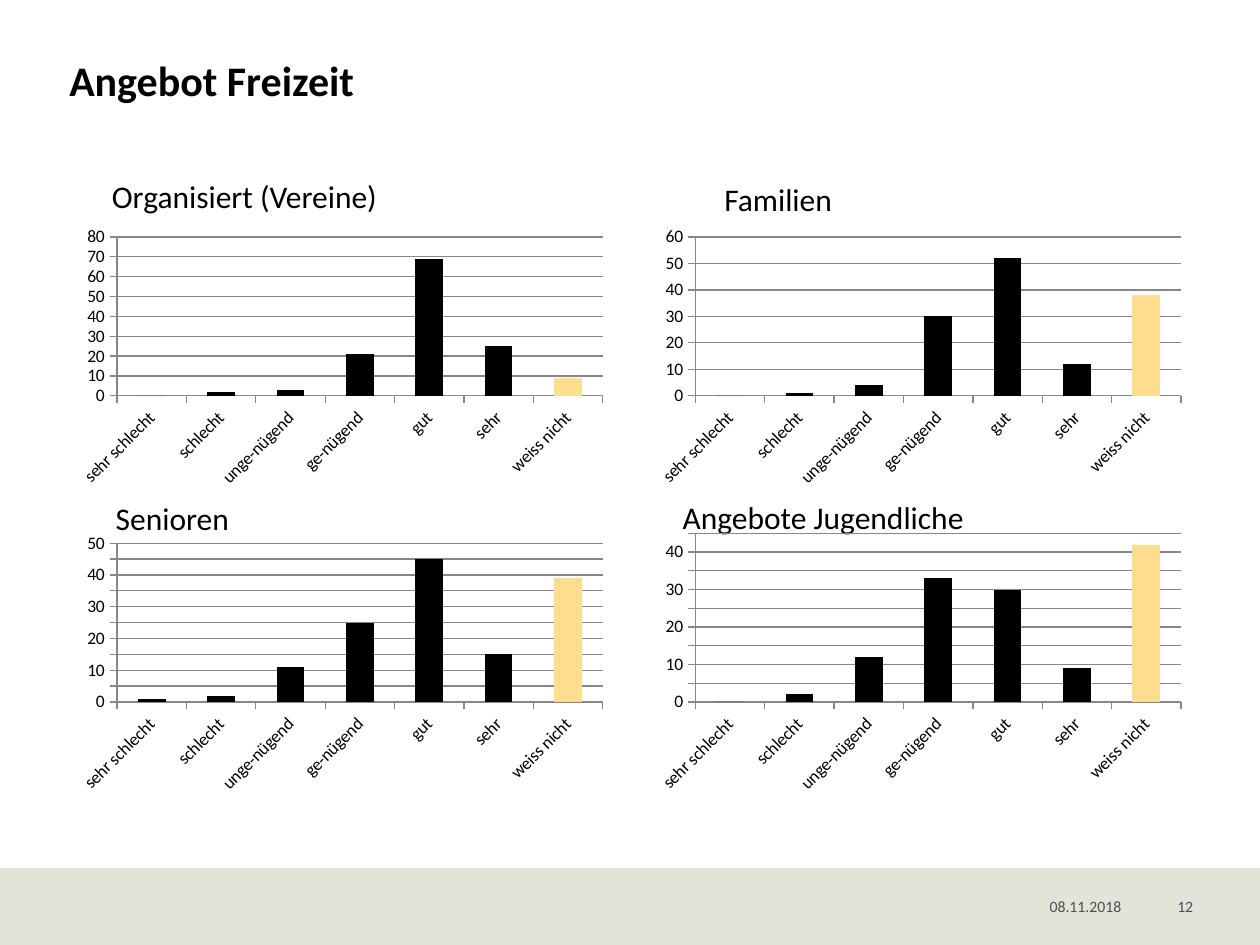
from pptx import Presentation
from pptx.chart.data import CategoryChartData
from pptx.dml.color import RGBColor
from pptx.enum.chart import XL_CHART_TYPE, XL_TICK_MARK
from pptx.enum.shapes import MSO_SHAPE
from pptx.enum.text import MSO_ANCHOR, PP_ALIGN
from pptx.util import Inches, Pt

COLUMN = XL_CHART_TYPE.COLUMN_CLUSTERED
OUT, NONE = XL_TICK_MARK.OUTSIDE, XL_TICK_MARK.NONE
RECT = MSO_SHAPE.RECTANGLE
TOP, LOW = MSO_ANCHOR.TOP, MSO_ANCHOR.BOTTOM
LEFT, RIGHT = PP_ALIGN.LEFT, PP_ALIGN.RIGHT

BLACK = RGBColor(0x00, 0x00, 0x00)
GOLD = RGBColor(0xFF, 0xDD, 0x8F)
SAND = RGBColor(0xE4, 0xE3, 0xD9)
SLATE = RGBColor(0x4C, 0x4F, 0x52)
GREY = RGBColor(0x87, 0x87, 0x87)

FACE = "Calibri"
GRADES = ["sehr schlecht", "schlecht", "unge-nügend", "ge-nügend",
          "gut", "sehr", "weiss nicht"]
COLS, ROWS = (0.55, 5.14), (1.76, 4.19)
PANELS = [
    ("Organisiert (Vereine)", (0.79, 1.36, 2.33, 0.4), (0, 2, 3, 21, 69, 25, 9), 80, 10),
    ("Familien", (5.65, 1.38, 1.07, 0.4), (0, 1, 4, 30, 52, 12, 38), 60, 10),
    ("Senioren", (0.82, 3.91, 1.11, 0.4), (1, 2, 11, 25, 45, 15, 39), 50, 5),
    ("Angebote Jugendliche", (5.32, 3.9, 2.46, 0.4), (0, 2, 12, 33, 30, 9, 42), 45, 5),
]


def assign(item, values):
    for name, value in values.items():
        setattr(item, name, value)


def inches(box):
    return [Inches(size) for size in box]


def write(shape, text, size, color=BLACK, bold=False, align=LEFT):
    frame = shape.text_frame
    frame.text = text
    para = frame.paragraphs[0]
    para.alignment = align
    assign(para.font, {"name": FACE, "size": Pt(size), "bold": bold})
    para.font.color.rgb = color


def trim(frame, anchor):
    assign(frame, {"margin_left": 0, "margin_right": 0, "margin_top": 0,
                   "margin_bottom": 0, "word_wrap": True,
                   "vertical_anchor": anchor})


def add_title(slide, text, box):
    title = slide.shapes.title
    assign(title, dict(zip(("left", "top", "width", "height"), inches(box))))
    trim(title.text_frame, TOP)
    write(title, text, 24, bold=True)


def add_band(slide, box):
    band = slide.shapes.add_shape(RECT, *inches(box))
    band.shadow.inherit = False
    band.fill.solid()
    band.fill.fore_color.rgb = SAND
    band.line.fill.background()


def add_foot(slide, text, box, align):
    foot = slide.shapes.add_textbox(*inches(box))
    trim(foot.text_frame, LOW)
    write(foot, text, 9, SLATE, align=align)


def add_label(slide, text, box):
    label = slide.shapes.add_textbox(*inches(box))
    label.text_frame.word_wrap = False
    write(label, text, 18)


def add_bars(slide, values, box, top, step):
    data = CategoryChartData()
    data.categories = GRADES
    data.add_series("Series 1", values)
    chart = slide.shapes.add_chart(COLUMN, *inches(box), data).chart
    assign(chart, {"has_legend": False, "has_title": False})
    assign(chart.font, {"name": FACE, "size": Pt(10)})
    chart.font.color.rgb = BLACK

    grades, scale = chart.category_axis, chart.value_axis
    assign(scale, {"minimum_scale": 0, "maximum_scale": top,
                   "major_unit": step, "has_major_gridlines": True})
    for axis in (grades, scale):
        assign(axis, {"major_tick_mark": OUT, "minor_tick_mark": NONE})
        axis.format.line.color.rgb = GREY
    scale.major_gridlines.format.line.color.rgb = GREY
    grades.tick_labels.font.size = Pt(10)
    grades._element.txPr.bodyPr.set("rot", "-2700000")

    plot = chart.plots[0]
    assign(plot, {"gap_width": 150, "vary_by_categories": False})
    bars = plot.series[0]
    last = bars.points[len(GRADES) - 1]
    for part, color in ((bars, BLACK), (last, GOLD)):
        part.format.fill.solid()
        part.format.fill.fore_color.rgb = color


def main():
    deck = Presentation()
    assign(deck, {"slide_width": Inches(10), "slide_height": Inches(7.5)})
    slide = deck.slides.add_slide(deck.slide_layouts[5])
    add_band(slide, (0, 6.89, 10, 0.61))
    add_title(slide, "Angebot Freizeit", (0.55, 0.43, 8.91, 0.4))
    add_foot(slide, "08.11.2018", (8.33, 6.93, 0.71, 0.34), LEFT)
    add_foot(slide, "12", (9.04, 6.93, 0.43, 0.34), RIGHT)
    for text, box, *_ in PANELS:
        add_label(slide, text, box)
    for index, (_, _, values, top, step) in enumerate(PANELS):
        row, col = divmod(index, len(COLS))
        add_bars(slide, values, (COLS[col], ROWS[row], 4.32, 2.15), top, step)
    deck.save("out.pptx")


if __name__ == "__main__":
    main()
